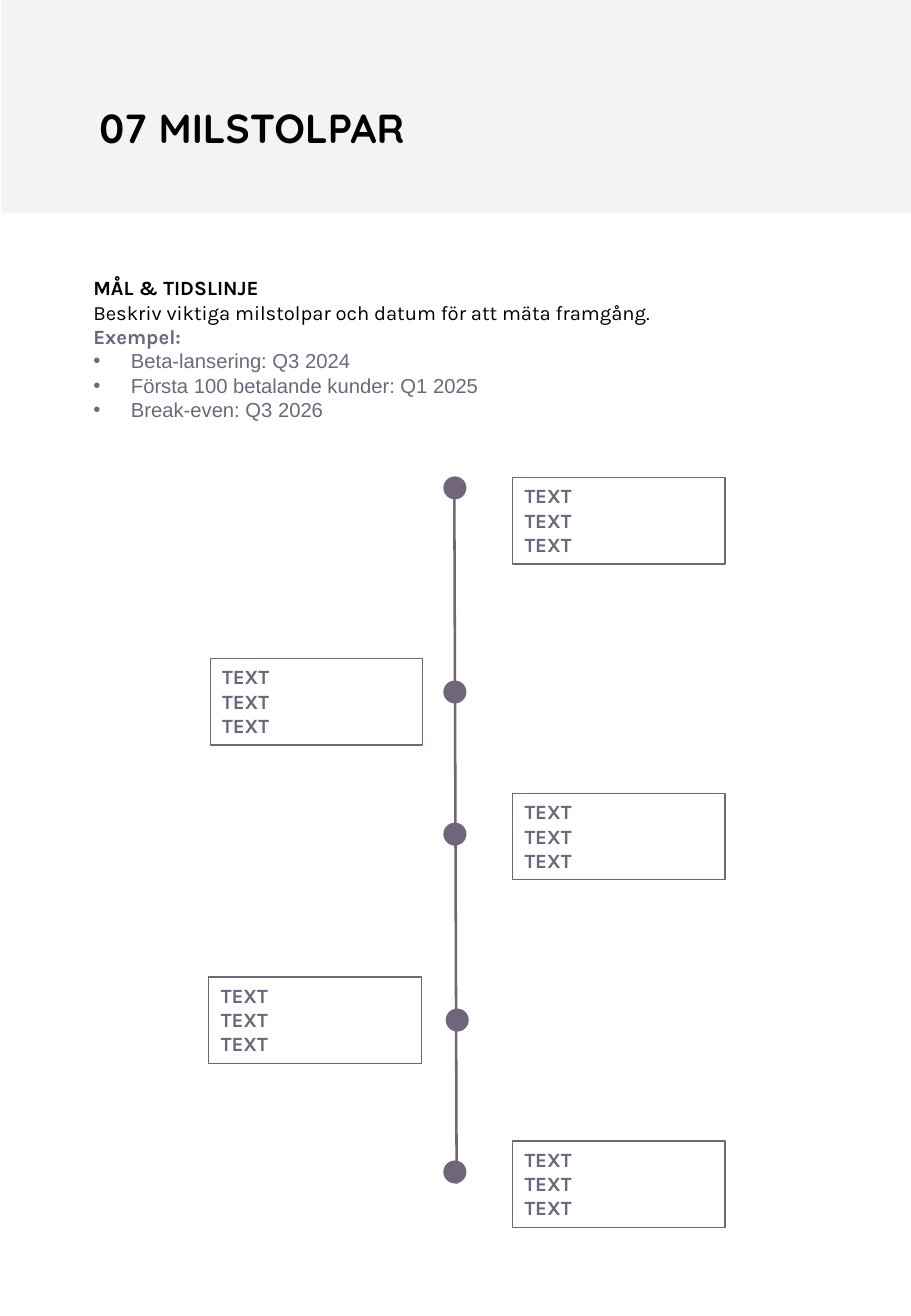
from dataclasses import dataclass

from lxml.etree import SubElement
from pptx import Presentation
from pptx.dml.color import RGBColor
from pptx.enum.shapes import MSO_CONNECTOR as Connector, MSO_SHAPE as Shape
from pptx.enum.text import MSO_ANCHOR as Anchor, PP_ALIGN as Align
from pptx.oxml.ns import qn
from pptx.util import Inches, Pt

WIDTH, HEIGHT = Inches(7.5), Inches(10.83)


@dataclass(frozen=True)
class Theme:
    ink: RGBColor = RGBColor.from_string("000000")
    accent: RGBColor = RGBColor.from_string("71657B")
    band: RGBColor = RGBColor.from_string("F4F3F2")
    title_font: str = "Quicksand"
    body_font: str = "Karla"
    bullet_font: str = "Arial"
    title_size: Pt = Pt(24)
    body_size: Pt = Pt(12)
    axis_width: Pt = Pt(1.5)
    frame_width: Pt = Pt(0.75)


THEME = Theme()
BULLET_INDENT = Inches(0.31)
DOT_SIZE = (2.53, 1.75)
CARD_SIZE = (23.33, 6.56)
CARD_LINES = ["TEXT"] * 3

# Each milestone: dot column, dot row, card column, card row
MILESTONES = [
    (48.67, 36.2, 56.27, 36.29),
    (48.67, 51.71, 23.07, 50.05),
    (48.67, 62.51, 56.27, 60.3),
    (48.93, 76.64, 22.93, 74.24),
    (48.67, 88.18, 56.27, 86.7),
]
EXAMPLES = [
    "Beta-lansering: Q3 2024",
    "Första 100 betalande kunder: Q1 2025",
    "Break-even: Q3 2026",
]


def place(column, row):
    """Turn a point on the 100 by 100 slide grid into slide lengths."""
    return int(WIDTH * column / 100), int(HEIGHT * row / 100)


def add_bullet(paragraph):
    properties = paragraph._p.get_or_add_pPr()
    properties.set("marL", str(BULLET_INDENT))
    properties.set("indent", str(-BULLET_INDENT))
    SubElement(properties, qn("a:buFont"), typeface=THEME.bullet_font)
    SubElement(properties, qn("a:buChar"), char="•")


def write_line(frame, text, font, size, color, bold=False, bullet=False):
    """Fill the first paragraph if it is empty, else append one."""
    first = frame.paragraphs[0]
    paragraph = frame.add_paragraph() if first.runs else first
    paragraph.alignment = Align.LEFT
    if bullet:
        add_bullet(paragraph)
    paragraph.add_run().text = text
    paragraph.font.name = font
    paragraph.font.size = size
    paragraph.font.bold = bold
    paragraph.font.color.rgb = color


def add_text_area(slide, corner, size):
    frame = slide.shapes.add_textbox(*place(*corner), *place(*size)).text_frame
    frame.word_wrap = True
    return frame


def add_figure(slide, kind, corner, size, fill=None, outline=None):
    figure = slide.shapes.add_shape(kind, *place(*corner), *place(*size))
    figure.shadow.inherit = False
    if fill is None:
        figure.fill.background()
    else:
        figure.fill.solid()
        figure.fill.fore_color.rgb = fill
    if outline is None:
        figure.line.fill.background()
    else:
        figure.line.color.rgb = outline
        figure.line.width = THEME.frame_width
    return figure


def add_axis(slide, start, end):
    axis = slide.shapes.add_connector(
        Connector.STRAIGHT, *place(*start), *place(*end))
    axis.line.color.rgb = THEME.accent
    axis.line.width = THEME.axis_width
    SubElement(axis._element.spPr, qn("a:effectLst"))


def add_card(slide, corner):
    card = add_figure(slide, Shape.RECTANGLE, corner, CARD_SIZE,
                      outline=THEME.accent)
    frame = card.text_frame
    frame.word_wrap = True
    frame.vertical_anchor = Anchor.TOP
    for text in CARD_LINES:
        write_line(frame, text, THEME.body_font, THEME.body_size,
                   THEME.accent, bold=True)


def add_header(slide):
    add_figure(slide, Shape.RECTANGLE, (0.13, 0), (100, 16.16),
               fill=THEME.band)
    title = add_text_area(slide, (9.6, 7.39), (80.93, 4.62))
    write_line(title, "07 MILSTOLPAR", THEME.title_font, THEME.title_size,
               THEME.ink, bold=True)


def add_intro(slide):
    intro = add_text_area(slide, (8.93, 20.5), (82.67, 13.94))
    body = (THEME.body_font, THEME.body_size)
    write_line(intro, "MÅL & TIDSLINJE", *body, THEME.ink, bold=True)
    write_line(
        intro, "Beskriv viktiga milstolpar och datum för att mäta framgång.",
        *body, THEME.ink)
    write_line(intro, "Exempel:", *body, THEME.accent, bold=True)
    for example in EXAMPLES:
        write_line(intro, example, THEME.bullet_font, THEME.body_size,
                   THEME.accent, bullet=True)


def add_timeline(slide):
    add_axis(slide, (49.87, 37.03), (50.13, 89.94))
    for dot_column, dot_row, card_column, card_row in MILESTONES:
        add_figure(slide, Shape.OVAL, (dot_column, dot_row), DOT_SIZE,
                   fill=THEME.accent)
        add_card(slide, (card_column, card_row))


def main():
    deck = Presentation()
    deck.slide_width, deck.slide_height = WIDTH, HEIGHT
    slide = deck.slides.add_slide(deck.slide_layouts[6])
    add_header(slide)
    add_intro(slide)
    add_timeline(slide)
    deck.save("out.pptx")


if __name__ == "__main__":
    main()
